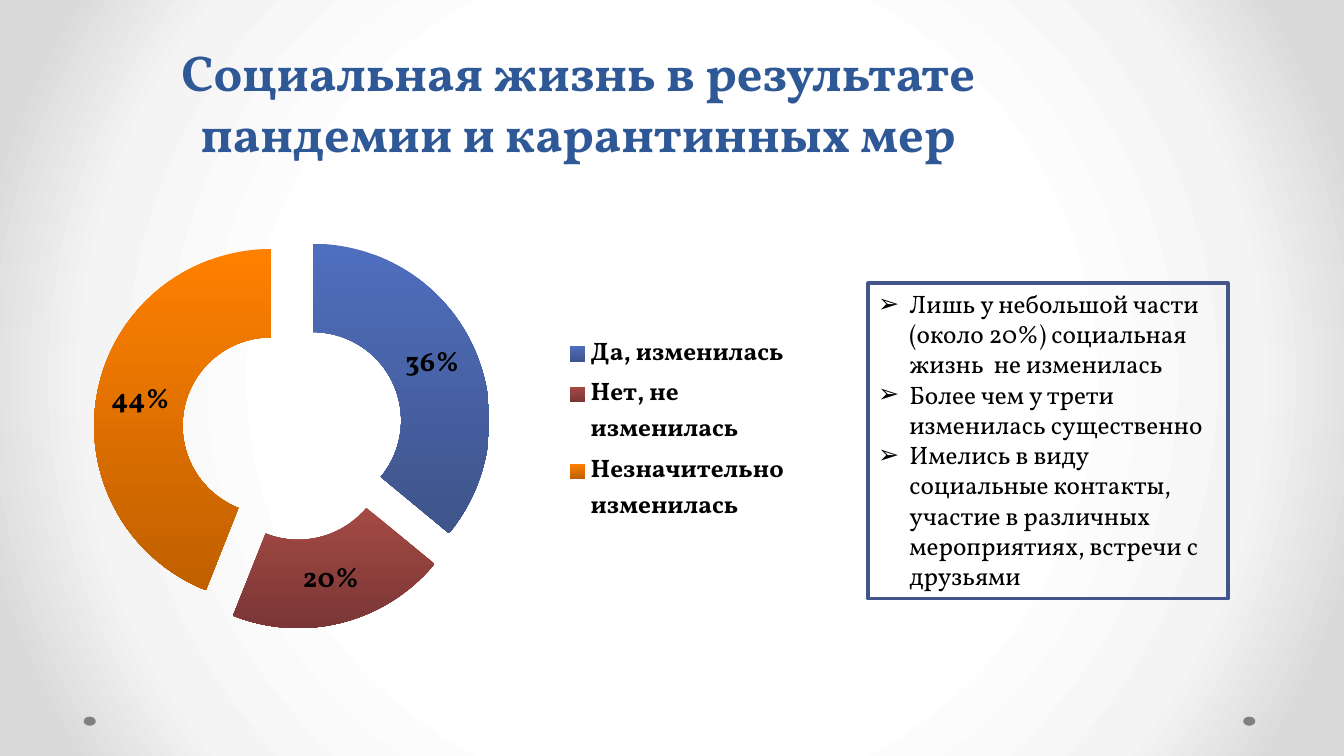
from pptx import Presentation
from pptx.chart.data import CategoryChartData
from pptx.dml.color import RGBColor
from pptx.enum.chart import XL_CHART_TYPE, XL_LEGEND_POSITION
from pptx.enum.shapes import MSO_SHAPE
from pptx.enum.text import MSO_ANCHOR, MSO_AUTO_SIZE, PP_ALIGN
from pptx.oxml import parse_xml
from pptx.oxml.ns import nsdecls, qn
from pptx.util import Inches, Pt

RING = XL_CHART_TYPE.DOUGHNUT
RIGHT = XL_LEGEND_POSITION.RIGHT
OVAL = MSO_SHAPE.OVAL
TOP, BOTTOM = MSO_ANCHOR.TOP, MSO_ANCHOR.BOTTOM
FIXED = MSO_AUTO_SIZE.NONE
LEFT, CENTER = PP_ALIGN.LEFT, PP_ALIGN.CENTER

HEAD = "Социальная жизнь в результате пандемии и карантинных мер"
NOTES = [
    "Лишь у небольшой части (около 20%) социальная жизнь  не изменилась",
    "Более чем у трети изменилась существенно",
    "Имелись в виду социальные контакты, участие в различных мероприятиях, встречи с друзьями",
]
SHARES = [
    ("Да, изменилась", 36, "4F6EBE", "3F548A"),
    ("Нет, не изменилась", 20, "A44A44", "7A3636"),
    ("Незначительно изменилась", 44, "FF8000", "C06000"),
]
GLOW = [(50, "FFFFFF"), (76, "F4F4F4"), (92, "DADADA")]


def tint(code):
    """Turn a hex string into a colour."""
    return RGBColor.from_string(code)


def apply(item, values):
    """Set attributes of an item from a dict."""
    for name, value in values.items():
        setattr(item, name, value)


def place(shape, box):
    """Move and size a shape to a box in inches."""
    names = ("left", "top", "width", "height")
    apply(shape, dict(zip(names, map(Inches, box))))


class Deck:
    """Hold the style and the current slide."""

    face = "Vollkorn"

    def __init__(self, show):
        """Add a title and content slide."""
        self.slide = show.slides.add_slide(show.slide_layouts[1])

    def font(self, font, size, color="000000", bold=False):
        """Format a font."""
        apply(font, {"name": self.face, "size": Pt(size), "bold": bold})
        font.color.rgb = tint(color)

    def back(self, stops):
        """Fill the background with a round gradient."""
        self.slide.background.fill.gradient()
        fill = next(self.slide.element.iter(qn("a:gradFill")))
        marks = "".join(
            f'<a:gs pos="{pos * 1000}"><a:srgbClr val="{code}"/></a:gs>'
            for pos, code in stops)
        fill.getparent().replace(fill, parse_xml(
            f'<a:gradFill {nsdecls("a")} rotWithShape="1"><a:gsLst>{marks}</a:gsLst>'
            '<a:path path="circle"><a:fillToRect l="50000" t="50000" r="50000" b="50000"/>'
            '</a:path></a:gradFill>'))

    def dot(self, box):
        """Draw a small grey dot."""
        dot = self.slide.shapes.add_shape(OVAL, *map(Inches, box))
        dot.shadow.inherit = False
        dot.fill.solid()
        dot.fill.fore_color.rgb = tint("808080")
        dot.line.fill.background()

    def title(self, text, box):
        """Write the title."""
        shape = self.slide.shapes.title
        place(shape, box)
        frame = shape.text_frame
        frame.text = text
        apply(frame, {"word_wrap": True, "auto_size": FIXED, "vertical_anchor": BOTTOM})
        para = frame.paragraphs[0]
        para.alignment = CENTER
        self.font(para.runs[0].font, 36, "2F5897", True)

    def list(self, items, box):
        """Write the framed list with arrow bullets."""
        shape = self.slide.placeholders[1]
        place(shape, box)
        shape.line.color.rgb = tint("42568D")
        shape.line.width = Pt(2.5)
        frame = shape.text_frame
        frame.text = "\n".join(items)
        apply(frame, {"word_wrap": True, "auto_size": FIXED, "vertical_anchor": TOP})
        for para in frame.paragraphs:
            apply(para, {"alignment": LEFT, "space_before": Pt(0)})
            self.font(para.runs[0].font, 18)
            props = para._p.get_or_add_pPr()
            props.set("marL", str(Inches(0.31)))
            props.set("indent", str(-Inches(0.31)))
            props.append(parse_xml(f'<a:buChar {nsdecls("a")} char="➢"/>'))

    def ring(self, rows, box):
        """Draw the split ring chart with its legend."""
        data = CategoryChartData()
        data.categories = [row[0] for row in rows]
        data.add_series("Series 1", [row[1] for row in rows])
        chart = self.slide.shapes.add_chart(RING, *map(Inches, box), data).chart
        apply(chart, {"has_title": False, "has_legend": True})
        self.font(chart.font, 10)
        apply(chart.legend, {"position": RIGHT, "include_in_layout": False})
        self.font(chart.legend.font, 18, bold=True)
        plot = chart.plots[0]
        plot.vary_by_categories = True
        series = plot.series[0]
        for spot, (_, _, high, low) in enumerate(rows):
            form = series.points[spot].format
            form.fill.gradient()
            form.fill.gradient_angle = 270
            for stop, code in zip(form.fill.gradient_stops, (high, low)):
                stop.color.rgb = tint(code)
            form.line.fill.background()
        labels = series.data_labels
        apply(labels, {"show_percentage": True, "show_value": False,
                       "number_format": "0%", "number_format_is_linked": False})
        self.font(labels.font, 20, bold=True)
        node = series._element
        node.find(qn("c:dPt")).addprevious(
            parse_xml(f'<c:explosion {nsdecls("c")} val="25"/>'))
        plot._element.find(qn("c:holeSize")).set("val", "50")
        area = plot._element.getparent()
        old = area.find(qn("c:layout"))
        if old is not None:
            area.remove(old)
        area.insert(0, parse_xml(
            f'<c:layout {nsdecls("c")}><c:manualLayout><c:layoutTarget val="inner"/>'
            '<c:xMode val="edge"/><c:yMode val="edge"/><c:x val="0"/><c:y val="0"/>'
            '<c:w val="0.563"/><c:h val="0.998"/></c:manualLayout></c:layout>'))


def main():
    """Build and save the slide."""
    show = Presentation()
    apply(show, {"slide_width": Inches(13.33), "slide_height": Inches(7.5)})
    deck = Deck(show)
    deck.back(GLOW)
    for left in (0.83, 12.33):
        deck.dot((left, 7.11, 0.12, 0.09))
    deck.title(HEAD, (0.93, 0.35, 9.61, 1.31))
    deck.ring(SHARES, (0.93, 2.29, 7.01, 3.96))
    deck.list(NOTES, (8.61, 2.81, 3.57, 3.13))
    show.save("out.pptx")


if __name__ == "__main__":
    main()
